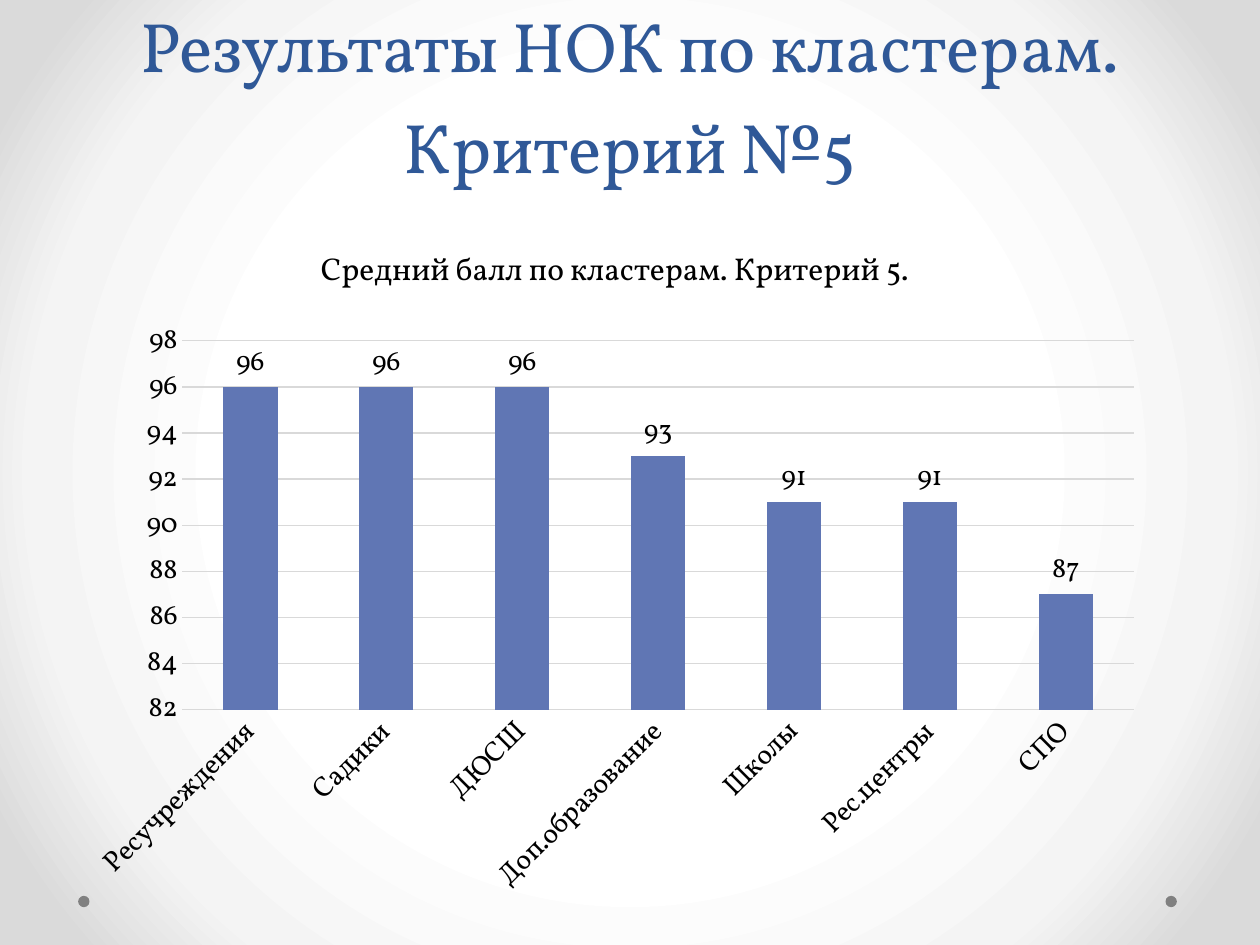
from lxml.etree import SubElement
from pptx import Presentation
from pptx.chart.data import CategoryChartData
from pptx.dml.color import RGBColor
from pptx.enum.chart import XL_CHART_TYPE, XL_LABEL_POSITION, XL_TICK_MARK
from pptx.enum.shapes import MSO_SHAPE
from pptx.enum.text import MSO_ANCHOR, PP_ALIGN
from pptx.oxml import parse_xml
from pptx.oxml.ns import nsdecls, qn
from pptx.util import Inches, Pt

# Content
TITLE = "Результаты НОК по кластерам. Критерий №5"
CHART_TITLE = "Средний балл по кластерам. Критерий 5."
SCORES = {
    "Ресучреждения": 96,
    "Садики": 96,
    "ДЮСШ": 96,
    "Доп.образование": 93,
    "Школы": 91,
    "Рес.центры": 91,
    "СПО": 87,
}
BACKGROUND_STOPS = [(50, "FFFFFF"), (76, "F4F4F4"), (92, "DADADA")]
DOT_LEFTS = [0.62, 9.25]
PLOT_AREA = {"x": 0.1, "y": 0.175, "w": 0.88, "h": 0.536}
FONT = "Vollkorn"


def color(hex_value):
    return RGBColor.from_string(hex_value)


def style_font(font, size, hex_value):
    font.name = FONT
    font.size = Pt(size)
    font.bold = False
    font.color.rgb = color(hex_value)


def set_background(slide):
    stops = "".join(
        f'<a:gs pos="{position * 1000}"><a:srgbClr val="{hex_value}"/></a:gs>'
        for position, hex_value in BACKGROUND_STOPS
    )
    gradient = parse_xml(
        f'<a:gradFill rotWithShape="1" {nsdecls("a")}><a:gsLst>{stops}</a:gsLst>'
        '<a:path path="circle"><a:fillToRect l="50000" t="50000" r="50000" b="50000"/>'
        "</a:path></a:gradFill>"
    )
    fill = slide.background.fill
    fill.solid()
    properties = slide.element.find(".//" + qn("p:bgPr"))
    properties.replace(properties[0], gradient)


def add_title(slide):
    title = slide.shapes.title
    title.left, title.top = Inches(0.5), Inches(0)
    title.width, title.height = Inches(9), Inches(1.54)
    frame = title.text_frame
    frame.text = TITLE
    frame.word_wrap = True
    frame.vertical_anchor = MSO_ANCHOR.BOTTOM
    paragraph = frame.paragraphs[0]
    paragraph.alignment = PP_ALIGN.CENTER
    paragraph.line_spacing = Pt(58)
    style_font(paragraph.runs[0].font, 40, "2F5897")


def place_plot_area(chart):
    plot_area = chart.element.find(".//" + qn("c:plotArea"))
    layout = plot_area.find(qn("c:layout"))
    if layout is None:
        layout = plot_area.makeelement(qn("c:layout"))
        plot_area.insert(0, layout)
    manual = SubElement(layout, qn("c:manualLayout"))
    settings = {"layoutTarget": "inner", "xMode": "edge", "yMode": "edge", **PLOT_AREA}
    for name, value in settings.items():
        SubElement(manual, qn(f"c:{name}")).set("val", str(value))


def add_score_chart(slide):
    data = CategoryChartData()
    data.categories = list(SCORES)
    data.add_series("Series 1", list(SCORES.values()))
    chart = slide.shapes.add_chart(
        XL_CHART_TYPE.COLUMN_CLUSTERED,
        Inches(0.59), Inches(1.75), Inches(8.58), Inches(5.46), data,
    ).chart
    style_font(chart.font, 16, "000000")
    chart.has_legend = False
    chart.has_title = True
    chart.chart_title.text_frame.text = CHART_TITLE
    style_font(chart.chart_title.text_frame.paragraphs[0].runs[0].font, 18, "000000")
    place_plot_area(chart)

    # Columns and their values
    plot = chart.plots[0]
    plot.gap_width = 150
    plot.vary_by_categories = False
    fill = plot.series[0].format.fill
    fill.solid()
    fill.fore_color.rgb = color("6076B4")
    plot.has_data_labels = True
    labels = plot.data_labels
    labels.show_value = True
    labels.position = XL_LABEL_POSITION.OUTSIDE_END
    style_font(labels.font, 16, "000000")

    # Axes
    for axis in (chart.category_axis, chart.value_axis):
        axis.major_tick_mark = axis.minor_tick_mark = XL_TICK_MARK.NONE
        axis.format.line.fill.background()
        style_font(axis.tick_labels.font, 16, "000000")
    text_body = chart.category_axis._element.find(qn("c:txPr"))
    text_body.find(qn("a:bodyPr")).set("rot", "-2700000")
    value_axis = chart.value_axis
    value_axis.minimum_scale, value_axis.maximum_scale = 82, 98
    value_axis.major_unit = 2
    value_axis.has_major_gridlines = True
    grid_line = value_axis.major_gridlines.format.line
    grid_line.color.rgb = color("D9D9D9")
    grid_line.width = Pt(0.75)


def add_dots(slide):
    for left in DOT_LEFTS:
        dot = slide.shapes.add_shape(
            MSO_SHAPE.OVAL, Inches(left), Inches(7.11), Inches(0.09), Inches(0.09)
        )
        dot.shadow.inherit = False
        dot.fill.solid()
        dot.fill.fore_color.rgb = color("808080")
        dot.line.fill.background()


def main():
    presentation = Presentation()
    presentation.slide_width, presentation.slide_height = Inches(10), Inches(7.5)
    slide = presentation.slides.add_slide(presentation.slide_layouts[5])
    set_background(slide)
    add_dots(slide)
    add_title(slide)
    add_score_chart(slide)
    presentation.save("out.pptx")


if __name__ == "__main__":
    main()
